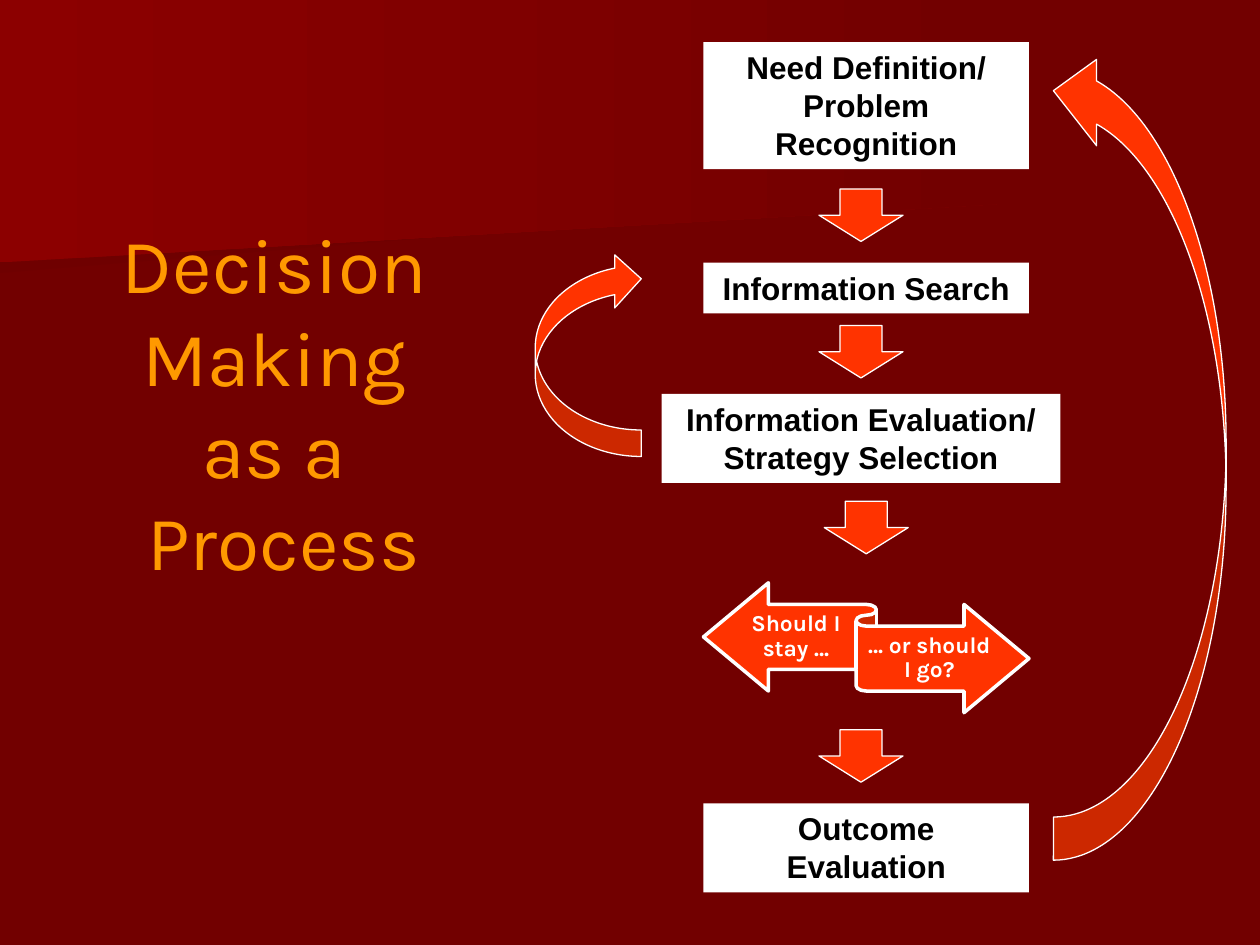
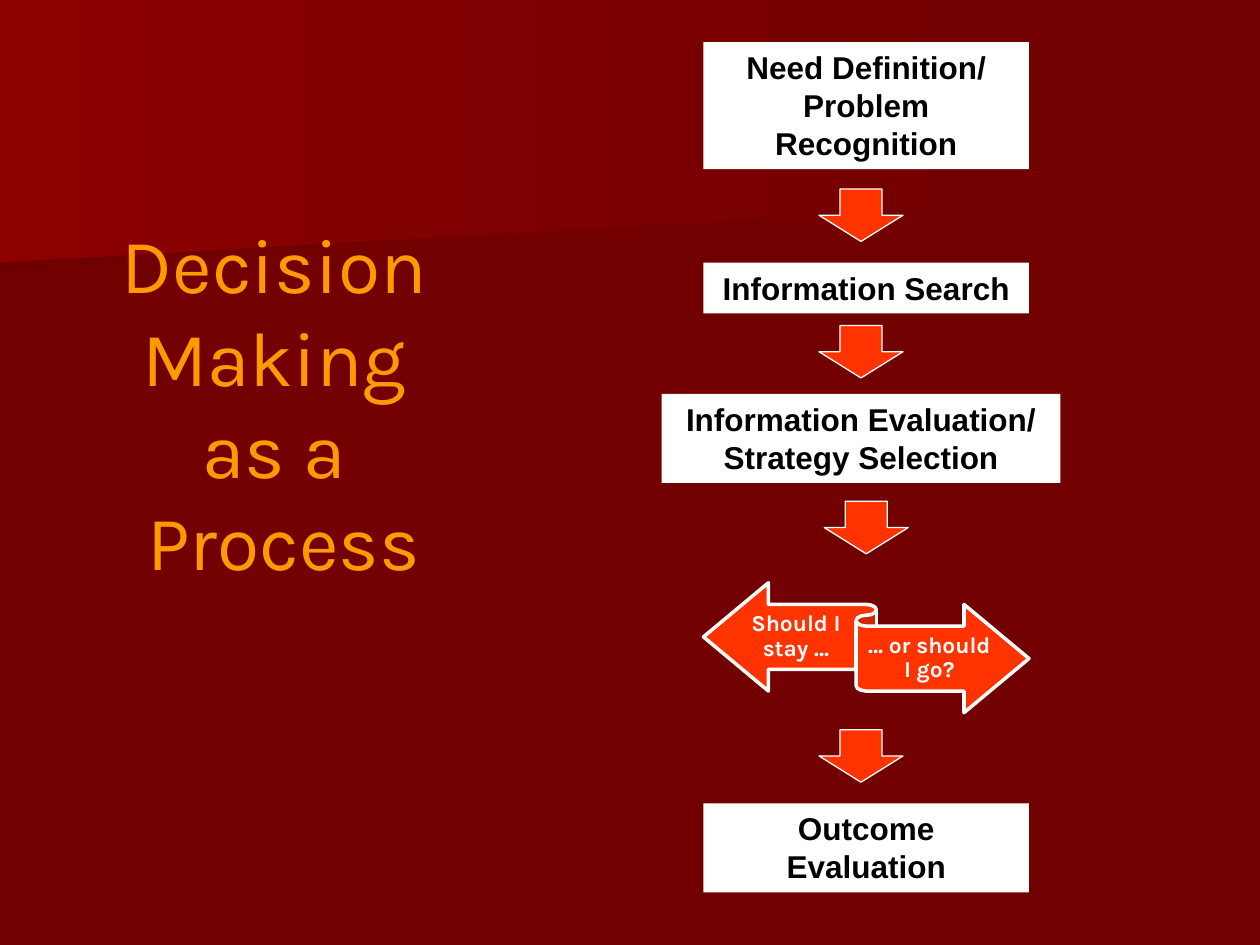
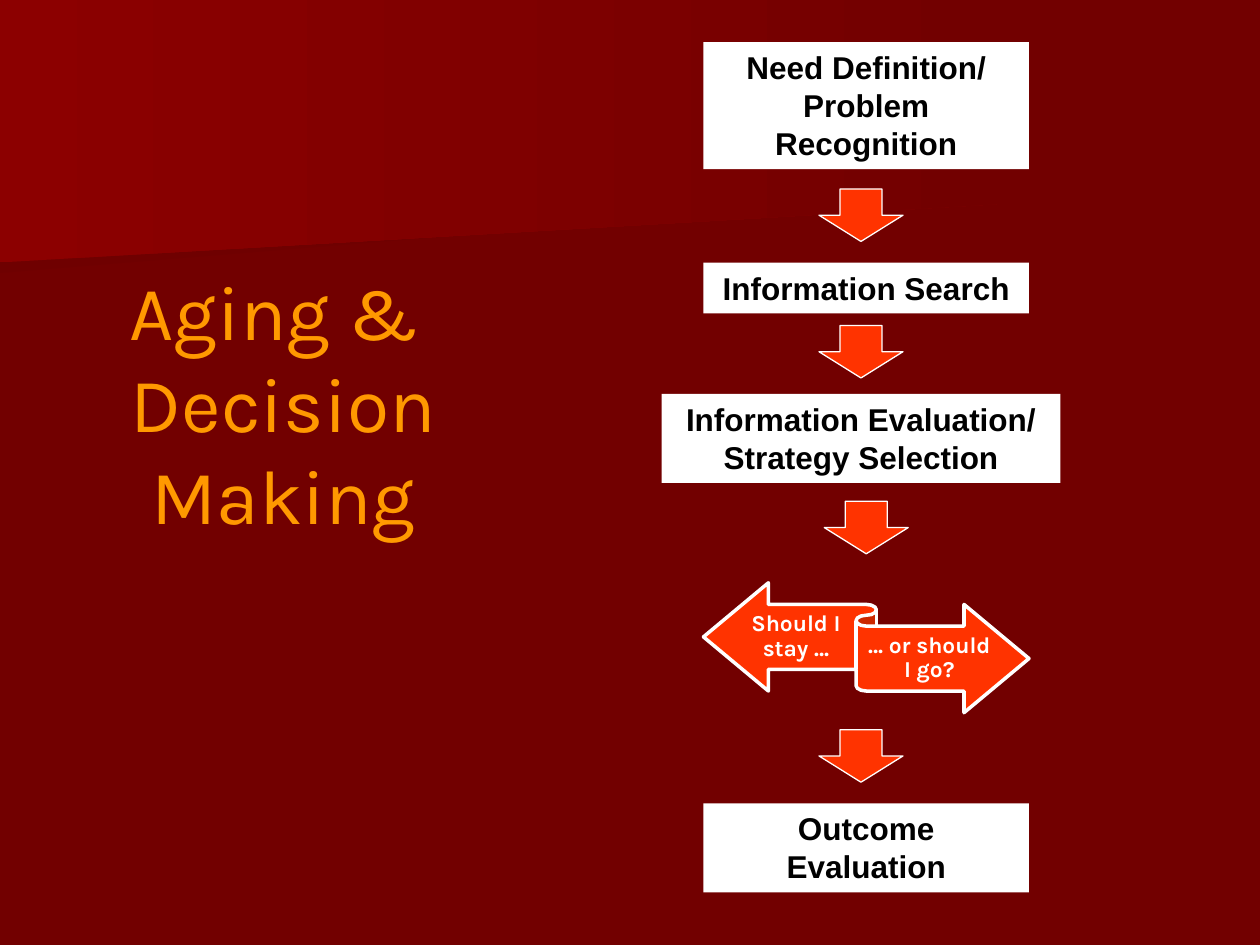
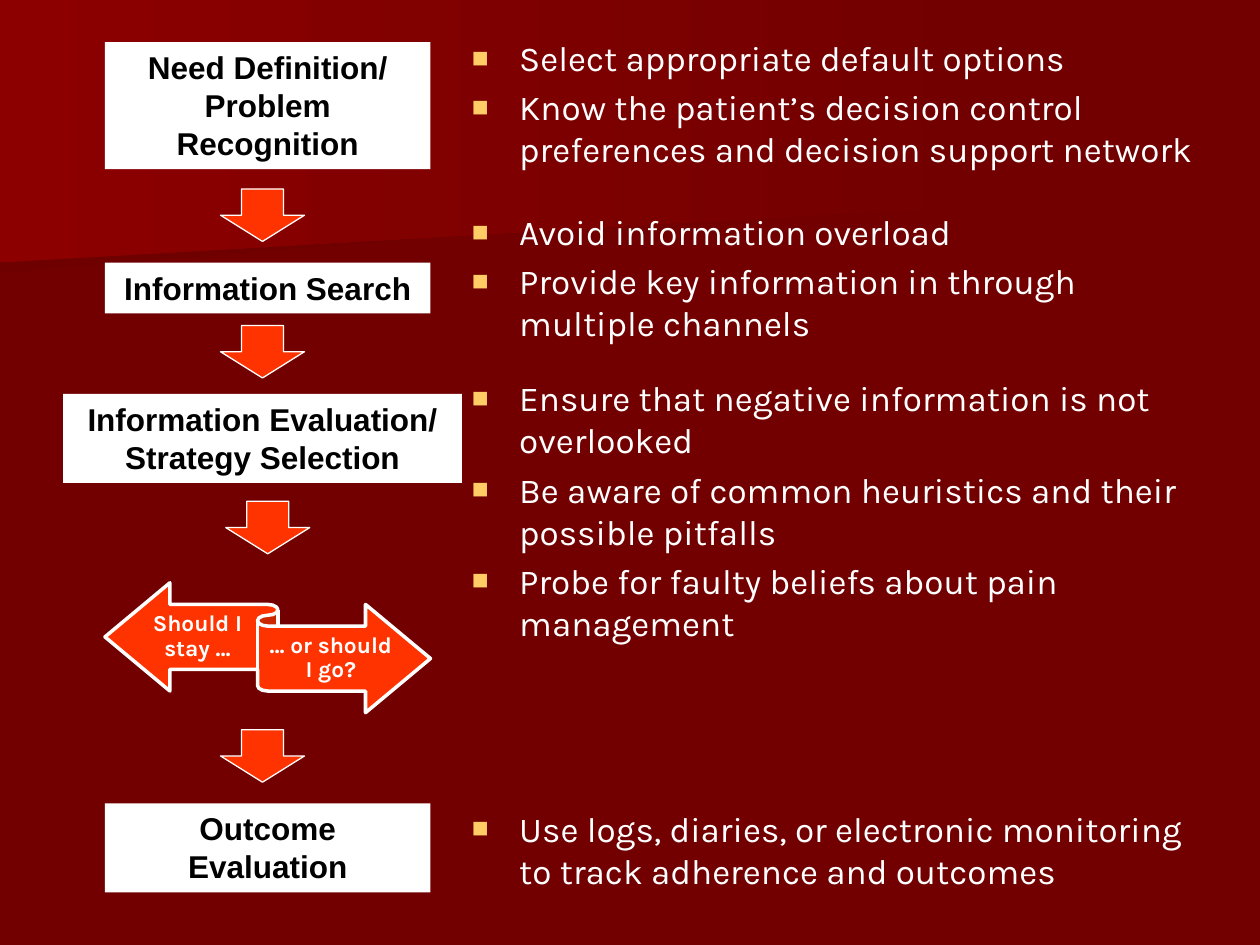
"""Build four slides that show decision making as a process."""
from dataclasses import dataclass

from lxml import etree
from pptx import Presentation
from pptx.dml.color import RGBColor
from pptx.enum.shapes import MSO_SHAPE
from pptx.enum.text import MSO_ANCHOR, MSO_AUTO_SIZE, PP_ALIGN
from pptx.oxml.ns import qn
from pptx.util import Emu, Inches, Pt

RECTANGLE = MSO_SHAPE.RECTANGLE
DOWN_ARROW = MSO_SHAPE.DOWN_ARROW
CURVED_ARROW = MSO_SHAPE.CURVED_DOWN_ARROW
RIBBON = MSO_SHAPE.LEFT_RIGHT_RIBBON
TOP, MIDDLE = MSO_ANCHOR.TOP, MSO_ANCHOR.MIDDLE
CENTER, LEFT = PP_ALIGN.CENTER, PP_ALIGN.LEFT
FIT_SHAPE, NO_FIT = MSO_AUTO_SIZE.SHAPE_TO_FIT_TEXT, MSO_AUTO_SIZE.NONE

SLIDE_WIDTH, SLIDE_HEIGHT = Inches(10), Inches(7.5)
COLUMNS, ROWS = 240, 180
CONTENT_LAYOUT, TITLE_LAYOUT = 1, 5
HEADING_FONT, BOX_FONT = "Karla", "Arial"
COLORS = {
    "background": "720000",
    "band": "8C0000",
    "band_shade": "6F0000",
    "title": "FF9900",
    "arrow": "FF3300",
    "bullet": "FFCC66",
    "white": "FFFFFF",
    "black": "000000",
}


@dataclass(frozen=True)
class Area:
    """A rectangle in grid columns and rows."""

    column: float
    row: float
    width: float
    height: float

    def shifted(self, columns: float) -> "Area":
        """Return the area moved to the right."""
        return Area(self.column + columns, self.row, self.width, self.height)

    def lengths(self) -> tuple:
        """Return left, top, width and height as lengths."""
        return (across(self.column), down(self.row), across(self.width), down(self.height))


@dataclass(frozen=True)
class TextStyle:
    """The look of a run."""

    font: str
    size: float
    color: str
    bold: bool = False


@dataclass(frozen=True)
class Step:
    """A labelled box of the process."""

    area: Area
    lines: tuple


@dataclass(frozen=True)
class Loop:
    """A curved arrow back to an earlier step."""

    area: Area
    flipped: bool


@dataclass(frozen=True)
class Band:
    """A shaded area behind every slide."""

    points: tuple
    color: str


@dataclass(frozen=True)
class Advice:
    """A bullet with the space above it in points."""

    text: str
    space_before: float = 4


@dataclass(frozen=True)
class TitledSlide:
    """A title beside the process, with its loops."""

    title: tuple
    loops: tuple = ()


TITLE_STYLE = TextStyle(HEADING_FONT, 44, "title")
STEP_STYLE = TextStyle(BOX_FONT, 18, "black", True)
CHOICE_STYLE = TextStyle(HEADING_FONT, 13, "white", True)
ADVICE_STYLE = TextStyle(HEADING_FONT, 20, "white")

TITLE_AREA = Area(-10, 61.5, 128, 30)
ADVICE_AREA = Area(87.5, 5.75, 144.5, 118)
ADVICE_INDENT = 9
FLOW_RIGHT, FLOW_LEFT = 126, 12

BANDS = (
    Band(((186.7, 36.7), (0, 52), (0, 24.25), (187, 24.25), (186.7, 30.7)), "band_shade"),
    Band(((190, 38.9), (0, 50), (0, 0), (190, 0)), "band"),
)
STEPS = (
    Step(Area(8, 8, 62, 24.2), ("Need Definition/", "Problem Recognition")),
    Step(Area(8, 50, 62, 9.7), ("Information Search",)),
    Step(Area(0, 75, 76, 17), ("Information Evaluation/", "Strategy Selection")),
    Step(Area(8, 153, 62, 17), ("Outcome Evaluation",)),
)
ARROWS = tuple(
    Area(column, row, 16, 10)
    for column, row in ((30, 36), (30, 62), (30, 139), (31, 95.5))
)
RIBBON_AREA = Area(8, 111, 62, 24.75)
CHOICES = (
    Step(Area(15.4, 115.1, 20.4, 12.3), ("Should I stay …",)),
    Step(Area(38.9, 119.2, 24.2, 12.3), ("… or should I go?",)),
)
LOOPS = (
    Loop(Area(139.7, 70, 154.8, 32.9), True),
    Loop(Area(92.6, 57.4, 38.9, 20.2), False),
)
PROCESS_TITLE = ("Decision ", "Making ", "as a ", "Process")
TITLED_SLIDES = (
    TitledSlide(PROCESS_TITLE, LOOPS),
    TitledSlide(PROCESS_TITLE),
    TitledSlide(("Aging & ", "Decision", "Making")),
)
ADVICE = (
    Advice("Select appropriate default options"),
    Advice("Know the patient’s decision control preferences and decision support network"),
    Advice("Avoid information overload", 23.5),
    Advice("Provide key information in through multiple channels"),
    Advice("Ensure that negative information is not overlooked", 19),
    Advice("Be aware of common heuristics and their possible pitfalls"),
    Advice("Probe for faulty beliefs about pain management"),
    Advice("Use logs, diaries, or electronic monitoring to track adherence and outcomes", 93.75),
)


def across(columns: float) -> Emu:
    """Convert grid columns to a length."""
    return Emu(round(SLIDE_WIDTH * columns / COLUMNS))


def down(rows: float) -> Emu:
    """Convert grid rows to a length."""
    return Emu(round(SLIDE_HEIGHT * rows / ROWS))


def rgb(name: str) -> RGBColor:
    """Look up a colour."""
    return RGBColor.from_string(COLORS[name])


def add_run(paragraph, text: str, style: TextStyle) -> None:
    """Add a styled run to a paragraph."""
    run = paragraph.add_run()
    run.text = text
    run.font.name = style.font
    run.font.size = Pt(style.size)
    run.font.bold = style.bold
    run.font.color.rgb = rgb(style.color)


def add_paragraphs(text_frame, lines: tuple, style: TextStyle, alignment) -> list:
    """Write each line as a paragraph and return the paragraphs."""
    paragraphs = []
    for line in lines:
        paragraph = text_frame.add_paragraph() if paragraphs else text_frame.paragraphs[0]
        paragraph.alignment = alignment
        add_run(paragraph, line, style)
        paragraphs.append(paragraph)
    return paragraphs


def prepare_frame(shape, anchor, auto_size):
    """Set wrapping, anchor and fit, and return the text frame."""
    text_frame = shape.text_frame
    text_frame.word_wrap = True
    text_frame.vertical_anchor = anchor
    text_frame.auto_size = auto_size
    return text_frame


def place(shape, area: Area) -> None:
    """Move and size a shape."""
    shape.left, shape.top, shape.width, shape.height = area.lengths()


def add_filled(shapes, preset, area: Area, color: str, line_width: float = 0):
    """Add a flat preset shape, outlined in white if a width is given."""
    shape = shapes.add_shape(preset, *area.lengths())
    shape.shadow.inherit = False
    shape.fill.solid()
    shape.fill.fore_color.rgb = rgb(color)
    if line_width:
        shape.line.color.rgb = rgb("white")
        shape.line.width = Pt(line_width)
    else:
        shape.line.fill.background()
    return shape


def add_step(slide, step: Step, offset: float) -> None:
    """Draw one box of the process."""
    shape = add_filled(slide.shapes, RECTANGLE, step.area.shifted(offset), "white")
    text_frame = prepare_frame(shape, TOP, FIT_SHAPE)
    add_paragraphs(text_frame, step.lines, STEP_STYLE, CENTER)


def add_choice(slide, offset: float) -> None:
    """Draw the two-way ribbon and its captions as a group."""
    group = slide.shapes.add_group_shape()
    add_filled(group.shapes, RIBBON, RIBBON_AREA.shifted(offset), "arrow", 2)
    for choice in CHOICES:
        caption = group.shapes.add_textbox(*choice.area.shifted(offset).lengths())
        text_frame = prepare_frame(caption, MIDDLE, NO_FIT)
        text_frame.margin_left = text_frame.margin_right = 0
        for paragraph in add_paragraphs(text_frame, choice.lines, CHOICE_STYLE, CENTER):
            paragraph.line_spacing = 0.9
            paragraph.space_after = Pt(4.5)


def add_process(slide, offset: float) -> None:
    """Draw the whole process from a grid column."""
    for step in STEPS:
        add_step(slide, step, offset)
    for area in ARROWS:
        add_filled(slide.shapes, DOWN_ARROW, area.shifted(offset), "arrow", 0.75)
    add_choice(slide, offset)


def add_loop(slide, loop: Loop) -> None:
    """Draw a curved arrow turned on its side."""
    shape = add_filled(slide.shapes, CURVED_ARROW, loop.area, "arrow", 0.75)
    shape.rotation = 270
    if loop.flipped:
        shape.element.spPr.find(qn("a:xfrm")).set("flipV", "1")


def add_title(slide, lines: tuple) -> None:
    """Fill the title placeholder, one line after another."""
    title = slide.shapes.title
    place(title, TITLE_AREA)
    paragraph = prepare_frame(title, MIDDLE, NO_FIT).paragraphs[0]
    paragraph.alignment = CENTER
    for index, line in enumerate(lines):
        if index:
            paragraph.add_line_break()
        add_run(paragraph, line, TITLE_STYLE)


def add_bullet(paragraph) -> None:
    """Give a paragraph a hanging square bullet."""
    properties = paragraph._p.get_or_add_pPr()
    indent = across(ADVICE_INDENT)
    properties.set("marL", str(indent))
    properties.set("indent", str(-indent))
    color = etree.SubElement(properties, qn("a:buClr"))
    etree.SubElement(color, qn("a:srgbClr")).set("val", COLORS["bullet"])
    etree.SubElement(properties, qn("a:buSzPct")).set("val", "80000")
    etree.SubElement(properties, qn("a:buFont")).set("typeface", BOX_FONT)
    etree.SubElement(properties, qn("a:buChar")).set("char", "■")


def add_advice(slide) -> None:
    """Fill the body placeholder with the bullets."""
    body = slide.placeholders[1]
    place(body, ADVICE_AREA)
    text_frame = prepare_frame(body, TOP, NO_FIT)
    texts = tuple(advice.text for advice in ADVICE)
    paragraphs = add_paragraphs(text_frame, texts, ADVICE_STYLE, LEFT)
    for paragraph, advice in zip(paragraphs, ADVICE):
        paragraph.space_before = Pt(advice.space_before)
        add_bullet(paragraph)


def add_band(slide, band: Band):
    """Draw a band that fades into the background."""
    points = [(across(column), down(row)) for column, row in band.points]
    builder = slide.shapes.build_freeform(*points[0])
    builder.add_line_segments(points[1:])
    shape = builder.convert_to_shape()
    shape.shadow.inherit = False
    shape.line.fill.background()
    shape.fill.gradient()
    shape.fill.gradient_angle = 0
    for stop, color in zip(shape.fill.gradient_stops, (band.color, "background")):
        stop.color.rgb = rgb(color)
    return shape


def style_master(presentation, slide) -> None:
    """Give the master its background and the bands, drawn by way of a slide."""
    master = presentation.slide_master
    master.background.fill.solid()
    master.background.fill.fore_color.rgb = rgb("background")
    tree = master.element.cSld.spTree
    first_id = max(shape.shape_id for shape in master.shapes) + 1
    for index, band in enumerate(BANDS):
        element = add_band(slide, band).element
        element.nvSpPr.cNvPr.set("id", str(first_id + index))
        tree.insert(2 + index, element)


def main() -> None:
    """Build and save the presentation."""
    presentation = Presentation()
    presentation.slide_width, presentation.slide_height = SLIDE_WIDTH, SLIDE_HEIGHT
    layouts = presentation.slide_layouts
    for content in TITLED_SLIDES:
        slide = presentation.slides.add_slide(layouts[TITLE_LAYOUT])
        add_title(slide, content.title)
        add_process(slide, FLOW_RIGHT)
        for loop in content.loops:
            add_loop(slide, loop)
    advice_slide = presentation.slides.add_slide(layouts[CONTENT_LAYOUT])
    title = advice_slide.shapes.title.element
    title.getparent().remove(title)
    add_process(advice_slide, FLOW_LEFT)
    add_advice(advice_slide)
    style_master(presentation, advice_slide)
    presentation.save("out.pptx")


if __name__ == "__main__":
    main()
